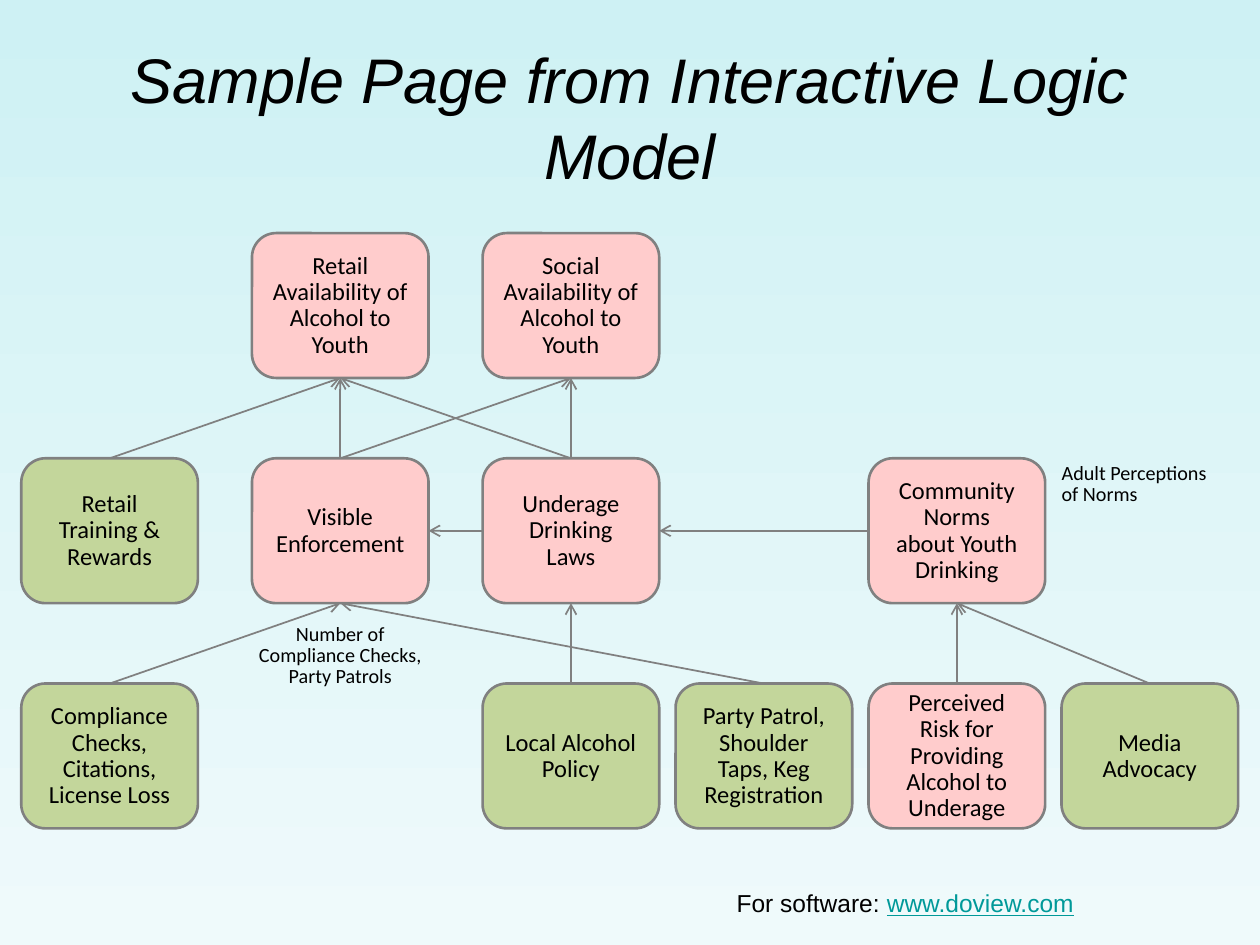
from lxml import etree
from pptx import Presentation
from pptx.dml.color import RGBColor
from pptx.enum import shapes as sh, text as tx
from pptx.oxml.ns import qn
from pptx.util import Cm, Pt

PINK, GREEN, GRAY, BLACK = "FFCCCC", "C3D69B", "808080", "000000"
TITLE = "Sample Page from Interactive Logic Model"
FOOT = [("For software: ", BLACK, False), ("www.doview.com", "009999", True)]

BOXES = {
    "retail": (1, 0, PINK, "Retail Availability of Alcohol to Youth"),
    "social": (2, 0, PINK, "Social Availability of Alcohol to Youth"),
    "train": (0, 1, GREEN, "Retail Training & Rewards"),
    "force": (1, 1, PINK, "Visible Enforcement"),
    "laws": (2, 1, PINK, "Underage Drinking Laws"),
    "norms": (4, 1, PINK, "Community Norms\nabout Youth Drinking"),
    "checks": (0, 2, GREEN, "Compliance Checks, Citations, License Loss"),
    "policy": (2, 2, GREEN, "Local Alcohol Policy"),
    "patrol": (3, 2, GREEN, "Party Patrol, Shoulder Taps, Keg Registration"),
    "risk": (4, 2, PINK, "Perceived Risk for Providing Alcohol to Underage"),
    "media": (5, 2, GREEN, "Media Advocacy"),
}
TIGHT = ("force", "norms")
UP, LEFT = (0, 2), (1, 3)
LINKS = [
    ("train", "retail", UP), ("force", "retail", UP), ("force", "social", UP),
    ("checks", "force", UP), ("laws", "social", UP), ("laws", "retail", UP),
    ("laws", "force", LEFT), ("policy", "laws", UP), ("patrol", "force", UP),
    ("risk", "norms", UP), ("media", "norms", UP), ("norms", "laws", LEFT),
]
MID, START = tx.PP_ALIGN.CENTER, tx.PP_ALIGN.LEFT
NOTES = [
    (5.08, 12.45, 3.56, MID, "Number of Compliance Checks, Party Patrols"),
    (21.26, 9.2, 3.28, START, "Adult Perceptions of Norms"),
]
COLS = [0.43, 5.08] + [9.73 + 3.89 * n for n in range(4)]
ROWS = [4.7 + 4.54 * n for n in range(3)]
WIDE, HIGH = 3.56, 2.92


def rgb(code):
    return RGBColor.from_string(code)


def put(item, values):
    for name, value in values.items():
        setattr(item, name, value)


def style(font, size, face, color=BLACK, **more):
    put(font, dict(size=Pt(size), name=face, **more))
    font.color.rgb = rgb(color)


def block(slide, x, y, wide, words, size, gap, align, fill=None, bare=False):
    box = slide.shapes.add_shape(
        sh.MSO_SHAPE.ROUNDED_RECTANGLE, Cm(x), Cm(y), Cm(wide), Cm(HIGH))
    box.shadow.inherit = False
    if fill:
        box.fill.solid()
        box.fill.fore_color.rgb = rgb(fill)
        box.line.color.rgb = rgb(GRAY)
        box.line.width = Pt(1.5)
    else:
        box.fill.background()
        box.line.fill.background()
    frame = box.text_frame
    anchor = tx.MSO_ANCHOR.MIDDLE if fill else tx.MSO_ANCHOR.TOP
    put(frame, dict(word_wrap=True, vertical_anchor=anchor, text=words))
    if bare:
        sides = ("left", "top", "right", "bottom")
        put(frame, {"margin_" + side: 0 for side in sides})
    for para in frame.paragraphs:
        put(para, dict(alignment=align, line_spacing=Pt(gap)))
        style(para.font, size, "Calibri")
    return box


def arrow(slide):
    wire = slide.shapes.add_connector(sh.MSO_CONNECTOR.STRAIGHT, 0, 0, 0, 0)
    wire.line.color.rgb = rgb(GRAY)
    wire.line.width = Pt(1)
    etree.SubElement(wire.line._get_or_add_ln(), qn("a:tailEnd"), type="arrow")
    etree.SubElement(wire._element.spPr, qn("a:effectLst"))
    return wire


def main():
    deck = Presentation()
    put(deck, dict(slide_width=Cm(25.4), slide_height=Cm(19.05)))
    slide = deck.slides.add_slide(deck.slide_layouts[6])

    back = slide.background.fill
    back.gradient()
    back.gradient_angle = 270
    for stop, code in zip(back.gradient_stops, ("CEF1F4", "EFFAFB")):
        stop.color.rgb = rgb(code)

    head = slide.shapes.add_textbox(Cm(1.27), Cm(0.76), Cm(22.86), Cm(3.18))
    frame = head.text_frame
    put(frame, dict(word_wrap=True, text=TITLE,
                    vertical_anchor=tx.MSO_ANCHOR.MIDDLE))
    para = frame.paragraphs[0]
    para.alignment = MID
    style(para.font, 36, "Arial", italic=True)

    foot = slide.shapes.add_textbox(Cm(14.6), Cm(17.78), Cm(7.47), Cm(0.86))
    foot.text_frame.word_wrap = False
    for words, color, under in FOOT:
        run = foot.text_frame.paragraphs[0].add_run()
        run.text = words
        style(run.font, 14, "Arial", color, underline=under)

    wires = [arrow(slide) for _ in LINKS]
    boxes = {
        key: block(slide, COLS[col], ROWS[row], WIDE, words, 14, 15, MID,
                   fill, key in TIGHT)
        for key, (col, row, fill, words) in BOXES.items()
    }
    for wire, (tail, tip, (out, into)) in zip(wires, LINKS):
        wire.begin_connect(boxes[tail], out)
        wire.end_connect(boxes[tip], into)

    for x, y, wide, align, words in NOTES:
        block(slide, x, y, wide, words, 11.5, 12, align, bare=True)

    deck.save("out.pptx")


if __name__ == "__main__":
    main()
